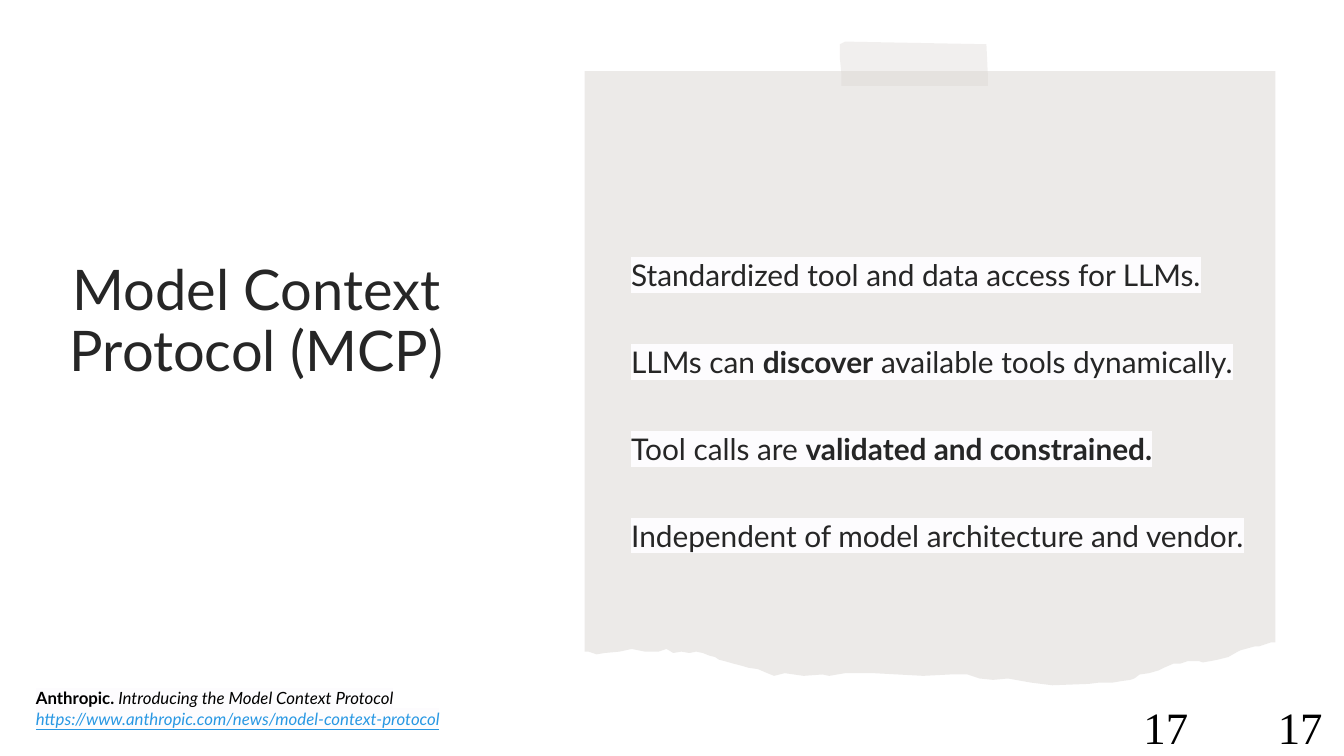
from lxml import etree
from pptx import Presentation, util as u
from pptx.dml.color import RGBColor
from pptx.enum import text
from pptx.oxml.ns import qn

INK = RGBColor(0x26, 0x26, 0x26)
BLACK = RGBColor(0, 0, 0)
LINK = RGBColor(0x29, 0x98, 0xE3)
PAPER = RGBColor(0x82, 0x76, 0x6A)
TAPE = RGBColor(0xD9, 0xD4, 0xD0)
HIGHLIGHT = RGBColor(0xFD, 0xFC, 0xFE)
HUNDREDTH_INCH = u.Cm(2.54) / 100

TORN_PAPER = [
    (435, 53), (949, 53), (949, 478), (946, 478), (940, 480), (937, 481),
    (934, 481), (923, 484), (921, 485), (914, 489), (910, 490), (906, 491),
    (901, 492), (895, 493), (892, 492), (884, 492), (878, 494), (873, 494),
    (866, 497), (862, 499), (855, 501), (848, 502), (844, 505), (841, 506),
    (834, 507), (828, 508), (818, 508), (810, 509), (783, 510), (767, 508),
    (750, 505), (739, 506), (729, 505), (720, 502), (707, 502), (687, 503),
    (650, 501), (637, 501), (629, 501), (617, 503), (612, 502), (598, 503),
    (584, 501), (576, 503), (571, 501), (564, 498), (557, 497), (550, 495),
    (546, 494), (539, 492), (535, 491), (532, 489), (528, 488), (523, 486),
    (518, 485), (513, 486), (507, 485), (501, 486), (496, 483), (490, 485),
    (480, 485), (470, 483), (461, 485), (450, 486), (444, 487), (438, 485),
    (435, 485),
]
TAPE_STRIP = [
    (625, 33), (629, 31), (734, 33), (735, 55), (735, 64),
    (626, 64), (626, 54), (625, 44),
]
BENEFITS = [
    [("Standardized tool and data access for LLMs.", False)],
    [("LLMs can\u00a0", False), ("discover", True),
     ("\u00a0available tools dynamically.", False)],
    [("Tool calls are\u00a0", False), ("validated and constrained.", True)],
    [("Independent of model architecture and vendor.", False)],
]


class SlideWriter:
    font = "Lato"

    def __init__(self, slide):
        self.slide = slide

    def sheet(self, outline, color, opacity):
        builder = self.slide.shapes.build_freeform(*outline[0], scale=HUNDREDTH_INCH)
        builder.add_line_segments(outline[1:], close=True)
        sheet = builder.convert_to_shape()
        sheet.shadow.inherit = False
        sheet.line.fill.background()
        sheet.fill.solid()
        sheet.fill.fore_color.rgb = color
        srgb = sheet._element.spPr.find(".//" + qn("a:srgbClr"))
        etree.SubElement(srgb, qn("a:alpha"), val=str(opacity * 1000))

    def box(self, left, top, width, height, anchor=text.MSO_ANCHOR.TOP):
        box = self.slide.shapes.add_textbox(
            u.Cm(left), u.Cm(top), u.Cm(width), u.Cm(height))
        frame = box.text_frame
        frame.word_wrap = True
        frame.vertical_anchor = anchor
        return frame

    def paragraph(self, frame, size, color, first=True, font=None):
        paragraph = frame.paragraphs[0] if first else frame.add_paragraph()
        paragraph.font.name = font or self.font
        paragraph.font.size = u.Pt(size)
        paragraph.font.color.rgb = color
        return paragraph

    def highlighted(self, paragraph, wording, bold=None, italic=None, color=None):
        run = paragraph.add_run()
        run.text = wording
        run.font.bold = bold
        run.font.italic = italic
        if color is not None:
            run.font.color.rgb = color
            run.font.underline = True
        highlight = etree.SubElement(run.font._element, qn("a:highlight"))
        etree.SubElement(highlight, qn("a:srgbClr"), val=str(HIGHLIGHT))

    def title(self, wording):
        frame = self.box(0.86, 3.84, 7.98, 4.52, text.MSO_ANCHOR.MIDDLE)
        heading = self.paragraph(frame, 30, INK)
        heading.text = wording
        heading.alignment = text.PP_ALIGN.CENTER
        heading.line_spacing = 0.9

    def benefits(self, benefits):
        frame = self.box(11.68, 4.8, 12.85, 6.2)
        for index, pieces in enumerate(benefits):
            benefit = self.paragraph(frame, 16, INK, first=index == 0)
            benefit.line_spacing = 0.9
            benefit.space_after = u.Pt(29.3)
            for wording, bold in pieces:
                self.highlighted(benefit, wording, bold)

    def citation(self, author, work, address):
        frame = self.box(0.43, 12.88, 11.18, 1.02)
        reference = self.paragraph(frame, 9, BLACK)
        self.highlighted(reference, author, bold=True)
        self.highlighted(reference, work, italic=True)
        source = self.paragraph(frame, 9, BLACK, first=False)
        self.highlighted(source, address, italic=True, color=LINK)

    def page_number(self, left, number):
        frame = self.box(left, 13.11, 1.47, 1.19)
        self.paragraph(frame, 24, BLACK, font="Times New Roman").text = number


def main():
    deck = Presentation()
    deck.slide_width, deck.slide_height = u.Cm(25.4), u.Cm(14.29)
    writer = SlideWriter(deck.slides.add_slide(deck.slide_layouts[6]))
    writer.title("Model Context Protocol (MCP)")
    writer.sheet(TORN_PAPER, PAPER, 15)
    writer.sheet(TAPE_STRIP, TAPE, 35)
    writer.benefits(BENEFITS)
    writer.citation("Anthropic.\u00a0", "Introducing the Model Context Protocol",
                    "https://www.anthropic.com/news/model-context-protocol")
    for left in (21.36, 23.9):
        writer.page_number(left, "17")
    deck.save("out.pptx")


if __name__ == "__main__":
    main()
